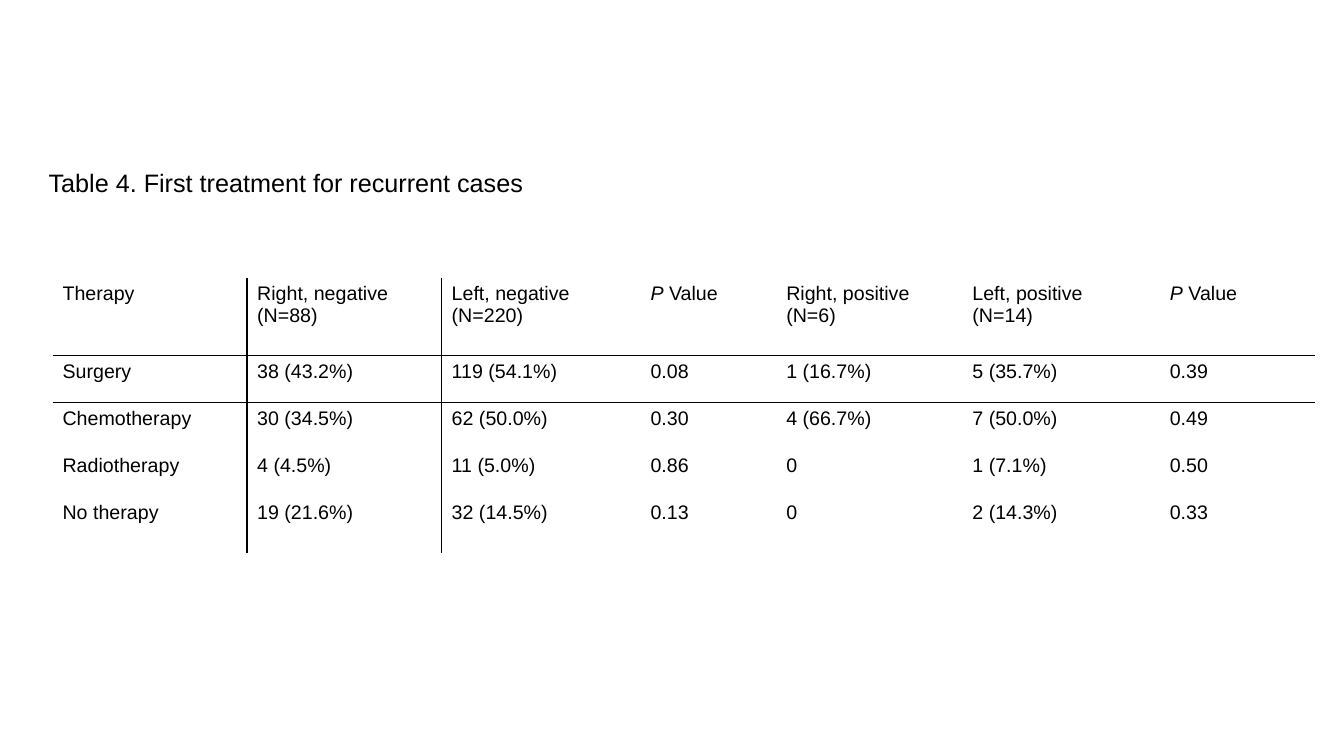
"""Build the slide with the table of first treatments for recurrent cases."""
from dataclasses import dataclass

from lxml.etree import SubElement
from pptx import Presentation
from pptx.dml.color import RGBColor
from pptx.enum.text import MSO_ANCHOR, MSO_AUTO_SIZE, PP_ALIGN
from pptx.oxml.ns import qn
from pptx.util import Pt


@dataclass
class Theme:
    ink: str = "000000"
    font: str = "Arial"
    title: int = 18
    body: int = 14
    rule: int = 1


theme = Theme()


def write(para, text, size):
    """Add text run by run; parts between asterisks are italic."""
    for i, part in enumerate(text.split("*")):
        if part:
            run = para.add_run()
            run.text = part
            run.font.name = theme.font
            run.font.size = Pt(size)
            run.font.bold = False
            run.font.italic = i % 2 == 1
            run.font.color.rgb = RGBColor.from_string(theme.ink)


def border(cell, side, drawn):
    """Draw or clear one side of a cell."""
    line = SubElement(cell._tc.get_or_add_tcPr(), qn(f"a:ln{side}"), w=str(Pt(theme.rule)))
    if drawn:
        fill = SubElement(line, qn("a:solidFill"))
        SubElement(fill, qn("a:srgbClr"), val=theme.ink)
    else:
        SubElement(line, qn("a:noFill"))


deck = Presentation()
deck.slide_width, deck.slide_height = Pt(960), Pt(540)
slide = deck.slides.add_slide(deck.slide_layouts[5])

title = slide.shapes.title
title.left, title.top, title.width, title.height = Pt(27.5), Pt(88.5), Pt(427.5), Pt(86.5)
frame = title.text_frame
frame.word_wrap = True
frame.auto_size = MSO_AUTO_SIZE.NONE
frame.vertical_anchor = MSO_ANCHOR.MIDDLE
para = frame.paragraphs[0]
para.alignment = PP_ALIGN.LEFT
para.line_spacing = 0.9
write(para, "Table 4. First treatment for recurrent cases", theme.title)

rows = [
    ["Therapy", "Right, negative\n(N=88)", "Left, negative\n(N=220)", "*P* Value",
     "Right, positive\n(N=6)", "Left, positive\n(N=14)", "*P* Value"],
    ["Surgery", "38 (43.2%)", "119 (54.1%)", "0.08", "1 (16.7%)", "5 (35.7%)", "0.39"],
    ["Chemotherapy", "30 (34.5%)", "62 (50.0%)", "0.30", "4 (66.7%)", "7 (50.0%)", "0.49"],
    ["Radiotherapy", "4 (4.5%)", "11 (5.0%)", "0.86", "0", "1 (7.1%)", "0.50"],
    ["No therapy", "19 (21.6%)", "32 (14.5%)", "0.13", "0", "2 (14.3%)", "0.33"],
]
widths = [139, 139, 142, 97, 133, 141, 111]
heights = [55.5, 33.5, 33.5, 33.5, 40.5]

holder = slide.shapes.add_table(
    len(rows), len(widths), Pt(37.5), Pt(198.5), Pt(sum(widths)), Pt(sum(heights)))
table = holder.table
table.first_row = table.horz_banding = False
for col, width in zip(table.columns, widths):
    col.width = Pt(width)
for row, height in zip(table.rows, heights):
    row.height = Pt(height)

for r, row in enumerate(rows):
    for c, text in enumerate(row):
        cell = table.cell(r, c)
        border(cell, "L", c in (1, 2))
        border(cell, "R", c in (0, 1))
        border(cell, "T", r in (1, 2))
        border(cell, "B", r in (0, 1))
        cell.fill.background()
        for i, line in enumerate(text.split("\n")):
            frame = cell.text_frame
            para = frame.add_paragraph() if i else frame.paragraphs[0]
            write(para, line, theme.body)

deck.save("out.pptx")
